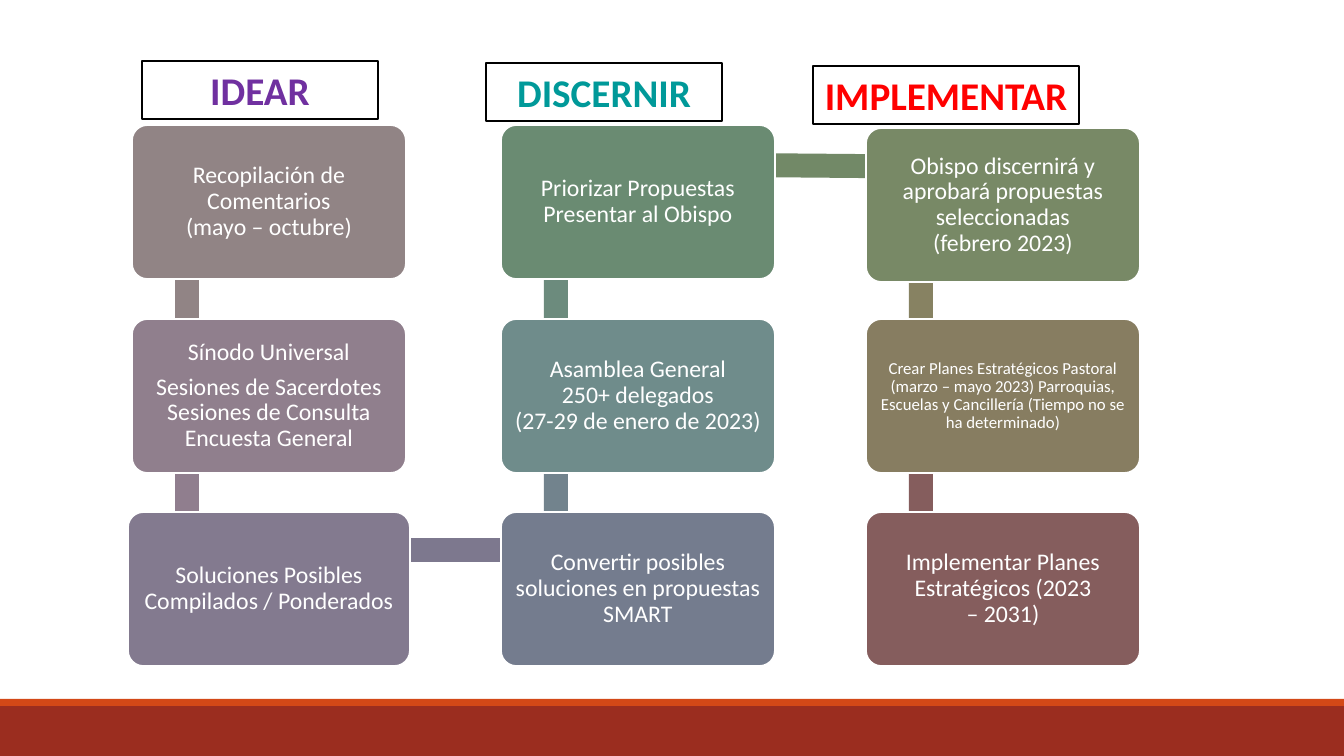
from pptx import Presentation
from pptx import util as u
from pptx.dml.color import RGBColor
from pptx.enum import shapes, text

PX = 12192000 / 1344
CARD_W, CARD_H = 274, 154
ROWS = (125, 319, 512)
BAR = 24

COLUMNS = [
    {
        "x": 132,
        "heading": ("IDEAR", "7030A0", (142, 61, 236, 58)),
        "bars": ("918485", "907E8E"),
        "cards": [
            ("918485", ["Recopilación de Comentarios\n(mayo – octubre)"]),
            ("907F8D", ["Sínodo Universal",
                        "Sesiones de Sacerdotes Sesiones de Consulta Encuesta General"]),
            ("837A8F", ["Soluciones Posibles Compilados / Ponderados"]),
        ],
    },
    {
        "x": 501,
        "heading": ("DISCERNIR", "009999", (486, 63, 236, 58)),
        "bars": ("6C8B7D", "72838D"),
        "cards": [
            ("6A8B72", ["Priorizar Propuestas Presentar al Obispo"]),
            ("6F8C8B", ["Asamblea General\n250+ delegados\n(27-29 de enero de 2023)"]),
            ("747C8E", ["Convertir posibles soluciones en propuestas SMART"]),
        ],
    },
    {
        "x": 866,
        "heading": ("IMPLEMENTAR", "FF0000", (813, 66, 266, 58)),
        "bars": ("878262", "855D5D"),
        "cards": [
            ("788966", ["Obispo discernirá y aprobará propuestas seleccionadas\n(febrero 2023)"]),
            ("877D61", ["Crear Planes Estratégicos Pastoral (marzo – mayo 2023) Parroquias, "
                        "Escuelas y Cancillería (Tiempo no se ha determinado)"]),
            ("855D5D", ["Implementar Planes Estratégicos (2023\n– 2031)"]),
        ],
    },
]


def px(length):
    return u.Emu(round(length * PX))


def colour(code):
    return RGBColor.from_string(code)


def add_box(page, place, fill, line=None, kind=shapes.MSO_SHAPE.RECTANGLE):
    box = page.shapes.add_shape(kind, *map(px, place))
    box.shadow.inherit = False
    box.fill.solid()
    box.fill.fore_color.rgb = colour(fill)
    if line:
        box.line.color.rgb = colour(line)
        box.line.width = u.Pt(1.25)
    else:
        box.line.fill.background()
    return box


def write(box, paragraphs, size, code, bold=False, spacing=1.0):
    frame = box.text_frame
    frame.vertical_anchor = text.MSO_ANCHOR.MIDDLE
    for index, content in enumerate(paragraphs):
        para = frame.add_paragraph() if index else frame.paragraphs[0]
        para.alignment = text.PP_ALIGN.CENTER
        para.line_spacing = spacing
        if index:
            para.space_before = u.Pt(6)
        for number, line in enumerate(content.split("\n")):
            if number:
                para.add_line_break()
            span = para.add_run()
            span.text = line
            span.font.name = "Calibri"
            span.font.size = u.Pt(size)
            span.font.bold = bold
            span.font.color.rgb = colour(code)


def add_card(page, place, fill, paragraphs, size, inset):
    card = add_box(page, place, fill, "FFFFFF", shapes.MSO_SHAPE.ROUNDED_RECTANGLE)
    card.adjustments[0] = 0.1
    frame = card.text_frame
    frame.word_wrap = True
    frame.margin_left = frame.margin_right = px(inset)
    frame.margin_top = frame.margin_bottom = px(inset)
    write(card, paragraphs, size, "FFFFFF", spacing=0.9)


def add_heading(page, label, code, place):
    heading = add_box(page, place, "FFFFFF", "000000")
    heading.text_frame.word_wrap = False
    write(heading, [label], 28, code, bold=True)


def add_column(page, column):
    left = column["x"]
    for top, fill in zip(ROWS, column["bars"]):
        add_box(page, (left + 43, top + CARD_H // 2, BAR, ROWS[1] - ROWS[0]), fill)
    for row, (fill, paragraphs) in enumerate(column["cards"]):
        top, width = ROWS[row], CARD_W
        size, inset = 17, 7
        if column is COLUMNS[2] and row == 0:
            top += 3
        if column is COLUMNS[2] and row == 1:
            size, inset = 12, 5
        if column is COLUMNS[0] and row == 2:
            left, width = left - 4, width + 8
        add_card(page, (left, top, width, CARD_H), fill, paragraphs, size, inset)
    add_heading(page, *column["heading"])


def add_links(page):
    add_box(page, (188, 538, 368, BAR), "7D788E")
    slanted = add_box(page, (556, 153, 365, BAR), "728967")
    slanted.rotation = 0.5


def add_footer(page, left, top, width, height):
    add_box(page, (left, top + 7, width, height - 7), "9B2D1F")
    add_box(page, (left, top, width, 7), "D34817")


def main():
    deck = Presentation()
    deck.slide_width, deck.slide_height = px(1344), px(756)
    page = deck.slides.add_slide(deck.slide_layouts[6])
    add_footer(page, 0, 699, 1344, 57)
    add_links(page)
    for column in COLUMNS:
        add_column(page, column)
    deck.save("out.pptx")


if __name__ == "__main__":
    main()
